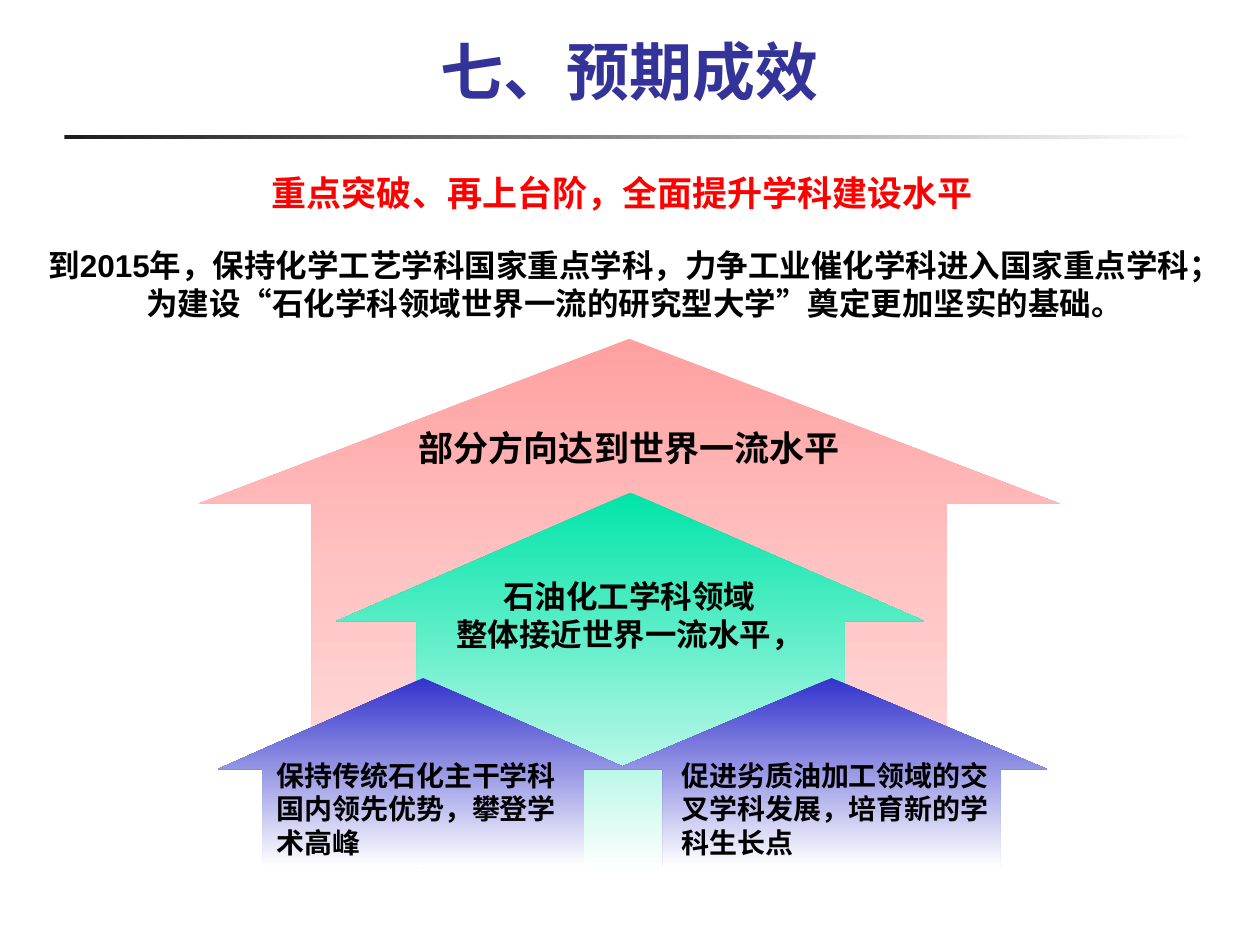
"""Build the expected-results slide with nested rising arrows."""
from copy import deepcopy
from dataclasses import dataclass

from pptx import Presentation
from pptx import util as u
from pptx.dml.color import RGBColor
from pptx.enum import lang, shapes, text
from pptx.slide import Slide

WHITE = RGBColor(0xFF, 0xFF, 0xFF)
BLACK = RGBColor(0, 0, 0)
CHARCOAL = RGBColor(0x1C, 0x1C, 0x1C)
RED = RGBColor(0xFF, 0, 0)
INDIGO = RGBColor(0x33, 0x33, 0x99)
BLUE = RGBColor(0x33, 0x33, 0xCC)
GREEN = RGBColor(0, 0xE4, 0xA8)
ROSE = RGBColor(0xFF, 0xA0, 0xA0)
ROSE_MIDDLE = RGBColor(0xFF, 0xC5, 0xC5)
ROSE_PALE = RGBColor(0xFF, 0xE3, 0xE3)

Box = tuple[float, float, float, float]


@dataclass(frozen=True)
class GradientShape:
    box: Box
    colors: tuple[RGBColor, ...]
    kind: shapes.MSO_SHAPE = shapes.MSO_SHAPE.UP_ARROW
    adjustments: tuple[float, ...] = ()
    angle: int = 270


@dataclass(frozen=True)
class Caption:
    box: Box
    lines: tuple[str, ...]
    size: int
    color: RGBColor = BLACK
    align: text.PP_ALIGN = text.PP_ALIGN.CENTER
    anchor: text.MSO_ANCHOR = text.MSO_ANCHOR.TOP
    wrap: bool = True


BLUE_HEAD = (0.783, 0.482)
GRADIENT_SHAPES = (
    GradientShape((1.3, 2.72, 22.86, 0.08), (CHARCOAL, WHITE),
                  kind=shapes.MSO_SHAPE.RECTANGLE, angle=0),
    GradientShape((4.01, 6.83, 17.35, 10.19), (ROSE, ROSE_MIDDLE, ROSE_PALE),
                  adjustments=(0.738, 0.326)),
    GradientShape((6.78, 9.93, 11.86, 7.65), (GREEN, WHITE), adjustments=(0.727, 0.339)),
    GradientShape((12.42, 13.67, 8.69, 3.81), (BLUE, WHITE), adjustments=BLUE_HEAD),
    GradientShape((4.39, 13.67, 8.28, 3.81), (BLUE, WHITE), adjustments=BLUE_HEAD),
)
CAPTIONS = (
    Caption((0, 0.58, 25.4, 1.73), ("七、预期成效",), 36, INDIGO,
            anchor=text.MSO_ANCHOR.BOTTOM),
    Caption((4.78, 3.33, 15.54, 1.12), ("重点突破、再上台阶，全面提升学科建设水平",), 20, RED),
    Caption((0.69, 4.83, 24.21, 1.8),
            ("到2015年，保持化学工艺学科国家重点学科，力争工业催化学科进入国家重点学科；"
             "为建设“石化学科领域世界一流的研究型大学”奠定更加坚实的基础。",), 18),
    Caption((8.15, 8.48, 9.07, 1.12), ("部分方向达到世界一流水平",), 20, wrap=False),
    Caption((8.69, 11.51, 8, 1.8), ("石油化工学科领域", "整体接近世界一流水平，"), 18),
    Caption((13.49, 15.16, 6.81, 2.31),
            ("促进劣质油加工领域的交叉学科发展，培育新的学科生长点",), 16,
            align=text.PP_ALIGN.LEFT),
    Caption((5.33, 15.16, 6.4, 2.31),
            ("保持传统石化主干学科国内领先优势，攀登学术高峰",), 16,
            align=text.PP_ALIGN.LEFT),
)


def draw_gradient_shape(slide: Slide, item: GradientShape) -> None:
    shape = slide.shapes.add_shape(item.kind, *map(u.Cm, item.box))
    shape.shadow.inherit = False
    shape.line.fill.background()
    for index, value in enumerate(item.adjustments):
        shape.adjustments[index] = value
    shape.fill.gradient()
    shape.fill.gradient_angle = item.angle
    stop_list = shape.fill._fill._gradFill.gsLst
    for _ in item.colors[2:]:
        stop_list.append(deepcopy(stop_list[-1]))
    for index, (stop, color) in enumerate(zip(shape.fill.gradient_stops, item.colors)):
        stop.position = index / (len(item.colors) - 1)
        stop.color.rgb = color


def draw_caption(slide: Slide, caption: Caption) -> None:
    frame = slide.shapes.add_textbox(*map(u.Cm, caption.box)).text_frame
    frame.word_wrap = caption.wrap
    frame.vertical_anchor = caption.anchor
    for index, line in enumerate(caption.lines):
        paragraph = frame.add_paragraph() if index else frame.paragraphs[0]
        paragraph.alignment = caption.align
        run = paragraph.add_run()
        run.text = line
        run.font.name = "Arial"
        run.font.size = u.Pt(caption.size)
        run.font.bold = True
        run.font.color.rgb = caption.color
        run.font.language_id = lang.MSO_LANGUAGE_ID.SIMPLIFIED_CHINESE


def main() -> None:
    presentation = Presentation()
    presentation.slide_width, presentation.slide_height = u.Cm(25.4), u.Cm(19.05)
    slide = presentation.slides.add_slide(presentation.slide_layouts[6])
    for item in GRADIENT_SHAPES:
        draw_gradient_shape(slide, item)
    for caption in CAPTIONS:
        draw_caption(slide, caption)
    presentation.save("out.pptx")


if __name__ == "__main__":
    main()
